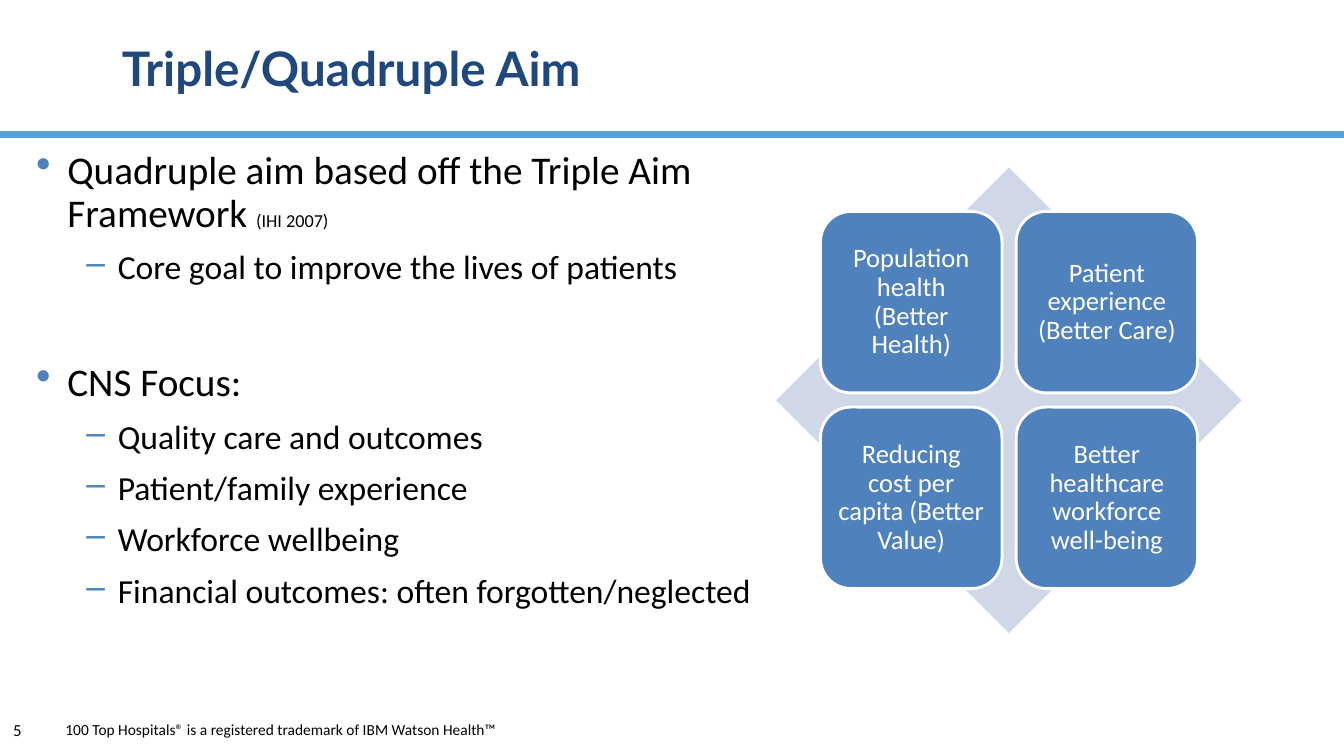
from lxml import etree
from pptx import Presentation
from pptx.dml.color import RGBColor
from pptx.enum.shapes import MSO_CONNECTOR, MSO_SHAPE
from pptx.enum.text import MSO_ANCHOR, PP_ALIGN
from pptx.oxml.ns import qn
from pptx.util import Cm, Pt

DIAMOND = MSO_SHAPE.DIAMOND
ROUND = MSO_SHAPE.ROUNDED_RECTANGLE
STRAIGHT = MSO_CONNECTOR.STRAIGHT
MIDDLE = MSO_ANCHOR.MIDDLE
CENTER = PP_ALIGN.CENTER


class Theme:
    head = "Lato"
    body = "Calibri"
    navy = RGBColor.from_string("1F497D")
    blue = RGBColor.from_string("4F81BD")
    pale = RGBColor.from_string("D0D8E8")
    sky = RGBColor.from_string("59A0D6")
    black = RGBColor.from_string("000000")
    white = RGBColor.from_string("FFFFFF")
    title = 34
    main = 28
    sub = 24
    tile = 19
    cite = 13
    page = 12
    foot = 11


def add_box(left, top, width, height, wrap=True):
    box = slide.shapes.add_textbox(Cm(left), Cm(top), Cm(width), Cm(height))
    box.text_frame.word_wrap = wrap
    return box.text_frame


def add_run(para, text, size, color=Theme.black, face=Theme.body, bold=False):
    run = para.add_run()
    run.text = text
    run.font.size = Pt(size)
    run.font.name = face
    run.font.bold = bold
    run.font.color.rgb = color


deck = Presentation()
deck.slide_width = Cm(33.87)
deck.slide_height = Cm(19.05)
slide = deck.slides.add_slide(deck.slide_layouts[6])

page = add_box(0.08, 18.01, 2.87, 1.02)
add_run(page.paragraphs[0], "5", Theme.page)

rule = slide.shapes.add_connector(STRAIGHT, Cm(0), Cm(3.38), Cm(33.87), Cm(3.38))
rule.line.color.rgb = Theme.sky
rule.line.width = Pt(5)
etree.SubElement(rule.element.spPr, qn("a:effectLst"))

foot = add_box(1.4, 18.03, 11.5, 0.74, wrap=False)
add_run(foot.paragraphs[0],
        "100 Top Hospitals® is a registered trademark of IBM Watson Health™",
        Theme.foot)

title = add_box(2.82, 0.36, 21.41, 2.87)
title.vertical_anchor = MIDDLE
title.paragraphs[0].line_spacing = 0.9
add_run(title.paragraphs[0], "Triple/Quadruple Aim", Theme.title,
        Theme.navy, Theme.head, True)

back = slide.shapes.add_shape(DIAMOND, Cm(19.56), Cm(4.22), Cm(11.73), Cm(11.73))
back.shadow.inherit = False
back.fill.solid()
back.fill.fore_color.rgb = Theme.pale
back.line.fill.background()

aims = [
    "Population health (Better Health)",
    "Patient experience (Better Care)",
    "Reducing cost per capita (Better Value)",
    "Better healthcare workforce well-being",
]
side, pitch = 4.57, 4.93
for index, aim in enumerate(aims):
    row, col = divmod(index, 2)
    tile = slide.shapes.add_shape(ROUND, Cm(20.68 + col * pitch),
                                  Cm(5.33 + row * pitch), Cm(side), Cm(side))
    tile.shadow.inherit = False
    tile.fill.solid()
    tile.fill.fore_color.rgb = Theme.blue
    tile.line.color.rgb = Theme.white
    tile.line.width = Pt(2)
    frame = tile.text_frame
    frame.word_wrap = True
    frame.vertical_anchor = MIDDLE
    frame.margin_left = frame.margin_right = Cm(0.2)
    frame.margin_top = frame.margin_bottom = Cm(0.2)
    para = frame.paragraphs[0]
    para.alignment = CENTER
    para.line_spacing = 0.9
    add_run(para, aim, Theme.tile, Theme.white)

points = [
    (0, "Quadruple aim based off the Triple Aim Framework ", "(IHI 2007)", 0),
    (1, "Core goal to improve the lives of patients", "", 4.8),
    (0, "CNS Focus:", "", 48),
    (1, "Quality care and outcomes", "", 4.8),
    (1, "Patient/family experience", "", 4.8),
    (1, "Workforce wellbeing", "", 4.8),
    (1, "Financial outcomes: often forgotten/neglected", "", 4.8),
]
marks = [("•", 0.79, 110, Theme.main), ("–", 2.06, 100, Theme.sub)]
body = add_box(0.66, 3.68, 19.13, 15.16)
for index, (level, text, cite, gap) in enumerate(points):
    para = body.add_paragraph() if index else body.paragraphs[0]
    mark, left, scale, size = marks[level]
    para.level = level
    para.line_spacing = 0.9
    para.space_before = Pt(gap)
    para.space_after = Pt(6)
    props = para._p.get_or_add_pPr()
    props.set("marL", str(Cm(left)))
    props.set("indent", str(Cm(-0.79)))
    tint = etree.SubElement(props, qn("a:buClr"))
    etree.SubElement(tint, qn("a:srgbClr"), val=str(Theme.blue))
    etree.SubElement(props, qn("a:buSzPct"), val=str(scale * 1000))
    etree.SubElement(props, qn("a:buChar"), char=mark)
    add_run(para, text, size)
    if cite:
        add_run(para, cite, Theme.cite)

deck.save("out.pptx")
